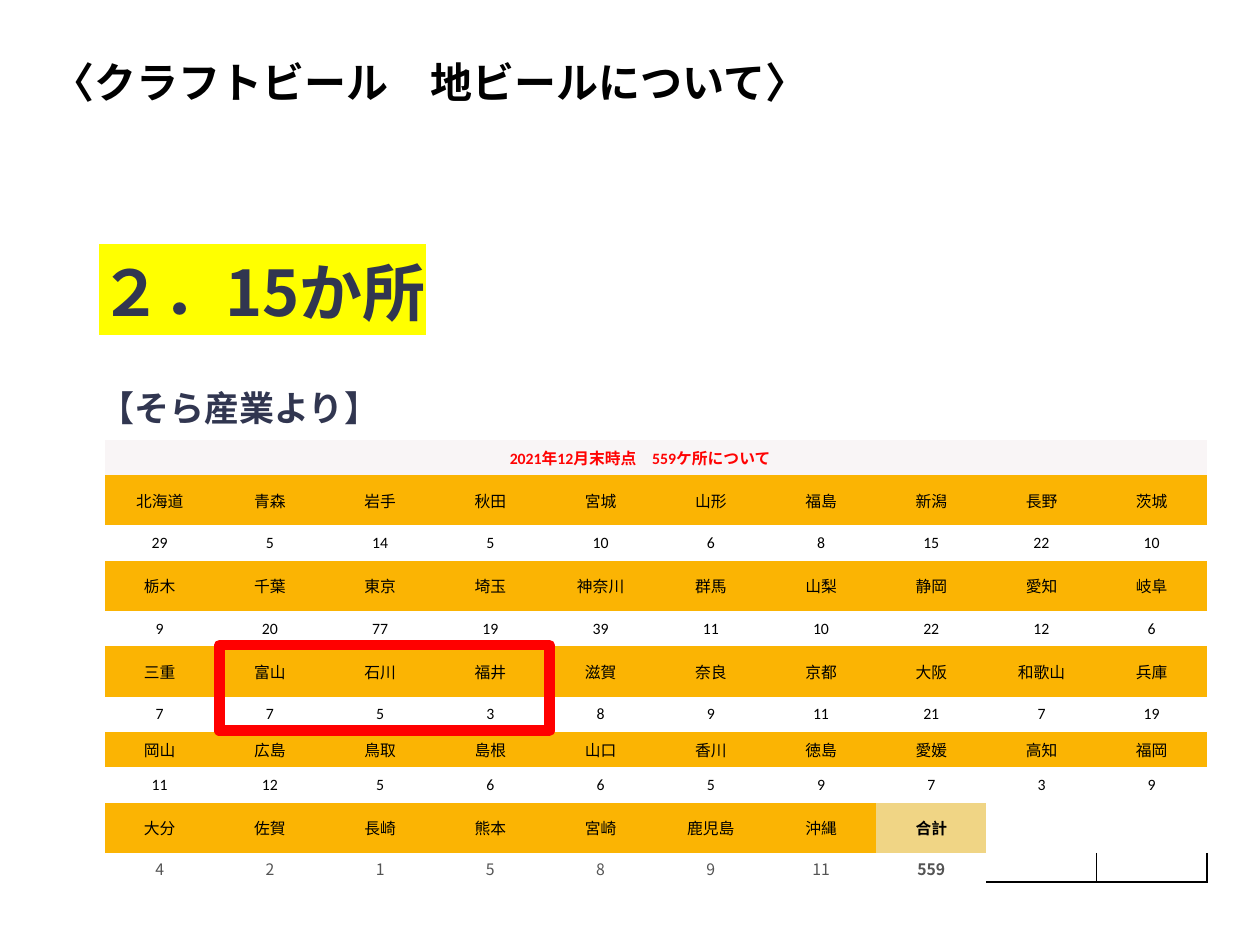
from dataclasses import dataclass
from typing import Optional

from pptx import Presentation
from pptx.dml.color import RGBColor
from pptx.enum.shapes import MSO_SHAPE
from pptx.enum.text import MSO_ANCHOR, PP_ALIGN
from pptx.oxml.ns import qn
from pptx.util import Inches, Pt
from lxml.etree import SubElement


@dataclass(frozen=True)
class Theme:
    latin: str = "Calibri"
    japanese: str = "Noto Sans CJK JP"
    black: str = "000000"
    navy: str = "313650"
    grey: str = "545454"
    red: str = "FF0000"
    caption_red: str = "FF0303"
    yellow: str = "FFFF00"
    amber: str = "FBB403"
    sand: str = "F0D585"
    caption_fill: str = "F9F5F6"
    title_size: int = 24
    answer_size: int = 36
    source_size: int = 20
    table_size: int = 9


@dataclass(frozen=True)
class TextStyle:
    size: int
    color: str
    font: str
    bold: bool = False
    highlight: Optional[str] = None


@dataclass(frozen=True)
class Label:
    text: str
    left: float
    top: float
    width: float
    height: float
    style: TextStyle
    anchor: MSO_ANCHOR = MSO_ANCHOR.MIDDLE
    line_spacing: Optional[float] = None


T = Theme()
NO_STYLE_NO_GRID = "{2D5ABB26-0587-4C30-8999-92F81FD0307C}"

LABELS = [
    Label("２．15か所", 0.69, 1.39, 8.62, 1.85,
          TextStyle(T.answer_size, T.navy, T.japanese, True, T.yellow)),
    Label("【そら産業より】", 0.69, 3.02, 9.03, 3.49,
          TextStyle(T.source_size, T.navy, T.japanese, True), MSO_ANCHOR.TOP),
]
TITLE = Label("〈クラフトビール　地ビールについて〉", 0.32, 0.37, 8.62, 0.61,
              TextStyle(T.title_size, T.black, T.latin, True), line_spacing=0.9)

# Breweries per prefecture: a row of names, then a row of counts
CAPTION = "2021年12月末時点　559ケ所について"
BREWERIES = [
    ("北海道 青森 岩手 秋田 宮城 山形 福島 新潟 長野 茨城", "29 5 14 5 10 6 8 15 22 10"),
    ("栃木 千葉 東京 埼玉 神奈川 群馬 山梨 静岡 愛知 岐阜", "9 20 77 19 39 11 10 22 12 6"),
    ("三重 富山 石川 福井 滋賀 奈良 京都 大阪 和歌山 兵庫", "7 7 5 3 8 9 11 21 7 19"),
    ("岡山 広島 鳥取 島根 山口 香川 徳島 愛媛 高知 福岡", "11 12 5 6 6 5 9 7 3 9"),
    ("大分 佐賀 長崎 熊本 宮崎 鹿児島 沖縄 合計", "4 2 1 5 8 9 11 559"),
]
ROW_HEIGHTS = [0.28, 0.4, 0.28, 0.4, 0.28, 0.4, 0.28, 0.28, 0.28, 0.4, 0.23]
COLUMNS = 10
TOTAL_COLUMN = 7


def rgb(color: str) -> RGBColor:
    return RGBColor.from_string(color)


def set_text(p, text: str, style: TextStyle) -> None:
    p.text = text
    for r in p.runs:
        font = r.font
        font.size, font.bold = Pt(style.size), style.bold
        font.color.rgb = rgb(style.color)
        rPr = r._r.get_or_add_rPr()
        if style.highlight:
            SubElement(SubElement(rPr, qn("a:highlight")), qn("a:srgbClr"), val=style.highlight)
        font.name = style.font
        SubElement(rPr, qn("a:ea"), typeface=T.japanese)


def add_label(s, label: Label) -> None:
    sp = s.shapes.add_textbox(Inches(label.left), Inches(label.top),
                              Inches(label.width), Inches(label.height))
    tf = sp.text_frame
    tf.word_wrap, tf.vertical_anchor = True, label.anchor
    set_text(tf.paragraphs[0], label.text, label.style)
    if label.line_spacing:
        tf.paragraphs[0].line_spacing = label.line_spacing


def fill_cell(cell, text: str, style: TextStyle, fill: Optional[str] = None) -> None:
    cell.margin_left = cell.margin_right = Inches(0.05)
    cell.margin_top = cell.margin_bottom = Inches(0.03)
    cell.vertical_anchor = MSO_ANCHOR.MIDDLE
    p = cell.text_frame.paragraphs[0]
    if text:
        set_text(p, text, style)
    else:
        SubElement(p._p, qn("a:endParaRPr"), sz=str(style.size * 100))
    p.alignment = PP_ALIGN.CENTER
    if fill:
        cell.fill.solid()
        cell.fill.fore_color.rgb = rgb(fill)
    else:
        cell.fill.background()


def add_borders(cell, *sides: str) -> None:
    tcPr = cell._tc.get_or_add_tcPr()
    for i, side in enumerate(sides):
        ln = tcPr.makeelement(qn(f"a:{side}"), {"w": str(Pt(1))})
        SubElement(SubElement(ln, qn("a:solidFill")), qn("a:srgbClr"), val=T.black)
        tcPr.insert(i, ln)


def add_brewery_table(s) -> None:
    frame = s.shapes.add_table(len(ROW_HEIGHTS), COLUMNS, Inches(0.83), Inches(3.49),
                               Inches(8.75), Inches(sum(ROW_HEIGHTS)))
    table = frame.table
    table.first_row = table.horz_banding = False
    table._tbl.tblPr.find(qn("a:tableStyleId")).text = NO_STYLE_NO_GRID
    for row, height in zip(table.rows, ROW_HEIGHTS):
        row.height = Inches(height)

    # Caption row; the wider right margin shifts the text left of centre
    caption = table.cell(0, 0)
    caption.merge(table.cell(0, COLUMNS - 1))
    fill_cell(caption, CAPTION, TextStyle(T.table_size, T.caption_red, T.latin, True),
              T.caption_fill)
    caption.margin_right = Inches(0.3)

    # Name and count rows
    for i, (names, counts) in enumerate(BREWERIES):
        last = i == len(BREWERIES) - 1
        for offset, line in enumerate((names, counts)):
            is_name = offset == 0
            values = line.split()
            values += [""] * (COLUMNS - len(values))
            for col, value in enumerate(values):
                total = last and col == TOTAL_COLUMN
                grey = last and not is_name
                style = TextStyle(T.table_size, T.grey if grey else T.black,
                                  T.japanese if grey else T.latin, total)
                fill = (T.sand if total else T.amber) if is_name and value else None
                cell = table.cell(1 + 2 * i + offset, col)
                fill_cell(cell, value, style, fill)
                if grey and not value:
                    add_borders(cell, "lnR", "lnB")


def add_highlight_frame(s) -> None:
    sp = s.shapes.add_shape(MSO_SHAPE.RECTANGLE, Inches(1.74), Inches(5.12),
                            Inches(2.62), Inches(0.68))
    sp.shadow.inherit = False
    sp.fill.background()
    sp.line.color.rgb = rgb(T.red)
    sp.line.width = Pt(6)


def main() -> None:
    prs = Presentation()
    prs.slide_width, prs.slide_height = Inches(10), Inches(7.5)
    s = prs.slides.add_slide(prs.slide_layouts[6])
    for label in LABELS:
        add_label(s, label)
    add_brewery_table(s)
    add_highlight_frame(s)
    add_label(s, TITLE)
    prs.save("out.pptx")


if __name__ == "__main__":
    main()
